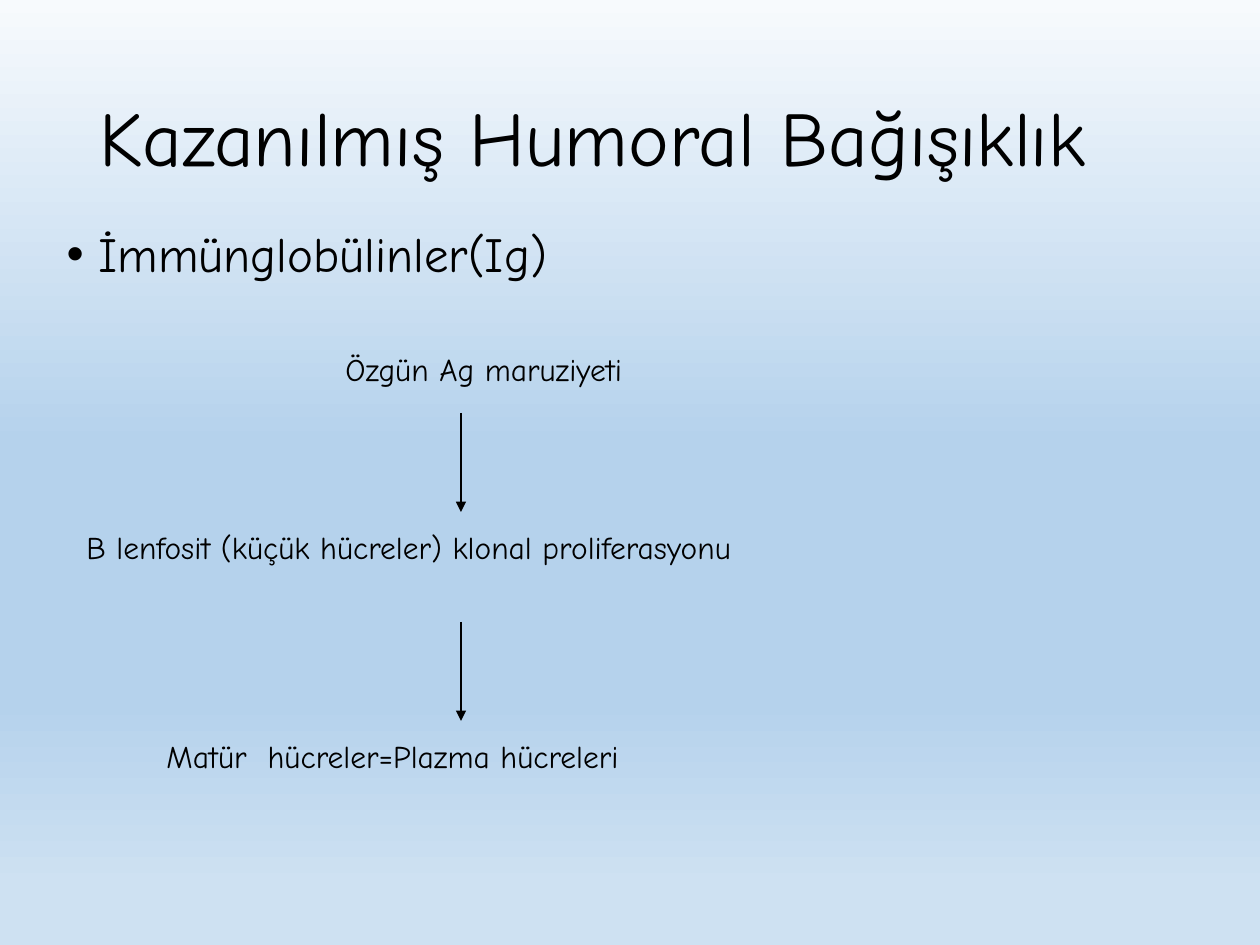
from dataclasses import dataclass

from lxml.etree import SubElement
from pptx import Presentation
from pptx.dml.color import RGBColor
from pptx.enum.shapes import MSO_CONNECTOR
from pptx.enum.text import MSO_ANCHOR, MSO_AUTO_SIZE, PP_ALIGN
from pptx.oxml import parse_xml
from pptx.oxml.ns import nsdecls, qn
from pptx.util import Emu, Pt


@dataclass(frozen=True)
class Theme:
    """Colours, typeface and type sizes of the slide."""

    font: str = "Comic Neue"
    ink: str = "000000"
    title: int = 44
    body: int = 28
    step: int = 18
    line: float = 0.75
    sky: tuple = ((0, "F7FAFD"), (47, "B5D2EC"), (74, "B5D2EC"), (94, "CEE1F2"))


THEME = Theme()
EMU_PER_PX = 914400 / 126
ARROW_X = 461
ARROW_LENGTH = 99
STEPS = (
    ("Özgün Ag maruziyeti", 333, 344, 338),
    ("B lenfosit (küçük hücreler) klonal proliferasyonu", 74, 522, 883),
    ("Matür  hücreler=Plazma hücreleri", 154, 731, 725),
)
STEP_HEIGHT = 50
ARROW_TO_STEP = 10


def px(length):
    """Turn pixels into EMU."""
    return Emu(round(length * EMU_PER_PX))


def paint_background(page):
    """Fill the page with the vertical sky gradient."""
    fill = page.background.fill
    fill.gradient()
    stops = "".join(
        f'<a:gs pos="{position * 1000}"><a:srgbClr val="{color}"/></a:gs>'
        for position, color in THEME.sky
    )
    gradient = parse_xml(
        f'<a:gradFill {nsdecls("a")} rotWithShape="1"><a:gsLst>{stops}</a:gsLst>'
        '<a:lin ang="5400000" scaled="0"/></a:gradFill>'
    )
    old = page.background._cSld.find(".//" + qn("a:gradFill"))
    old.getparent().replace(old, gradient)


def write(box, text, size, spacing=None, before=0, anchor=MSO_ANCHOR.TOP,
          fit=MSO_AUTO_SIZE.NONE):
    """Write one left-aligned paragraph into a box and return it."""
    frame = box.text_frame
    frame.word_wrap = True
    frame.auto_size = fit
    frame.vertical_anchor = anchor
    para = frame.paragraphs[0]
    para.alignment = PP_ALIGN.LEFT
    para.space_before = Pt(before)
    if spacing:
        para.line_spacing = spacing
    span = para.add_run()
    span.text = text
    span.font.name = THEME.font
    span.font.size = Pt(size)
    span.font.color.rgb = RGBColor.from_string(THEME.ink)
    return para


def place(box, left, top, width, height):
    """Move and size a placeholder."""
    box.left, box.top = px(left), px(top)
    box.width, box.height = px(width), px(height)


def add_bullet(para, indent):
    """Give a paragraph a round bullet with a hanging indent."""
    properties = para._p.get_or_add_pPr()
    properties.set("marL", str(px(indent)))
    properties.set("indent", str(-px(indent)))
    SubElement(properties, qn("a:buFont")).set("typeface", "Arial")
    SubElement(properties, qn("a:buChar")).set("char", "•")


def add_step(page, text, left, top, width):
    """Add one step of the process as a text box."""
    box = page.shapes.add_textbox(px(left), px(top), px(width), px(STEP_HEIGHT))
    write(box, text, THEME.step, before=THEME.step / 2,
          fit=MSO_AUTO_SIZE.SHAPE_TO_FIT_TEXT)


def add_arrow(page, bottom):
    """Add a downward arrow that ends at the given height."""
    arrow = page.shapes.add_connector(
        MSO_CONNECTOR.STRAIGHT, px(ARROW_X), px(bottom - ARROW_LENGTH),
        px(ARROW_X), px(bottom))
    arrow.line.width = Pt(THEME.line)
    arrow.line.color.rgb = RGBColor.from_string(THEME.ink)
    SubElement(arrow.line._get_or_add_ln(), qn("a:tailEnd")).set("type", "triangle")
    SubElement(arrow._element.spPr, qn("a:effectLst"))


def main():
    """Build and save the slide."""
    deck = Presentation()
    deck.slide_width, deck.slide_height = px(1260), px(945)
    page = deck.slides.add_slide(deck.slide_layouts[1])
    paint_background(page)

    title, body = page.shapes.title, page.placeholders[1]
    place(title, 87, 50, 1086, 183)
    write(title, "Kazanılmış Humoral Bağışıklık", THEME.title, spacing=0.9,
          anchor=MSO_ANCHOR.MIDDLE)
    place(body, 54, 224, 1134, 91)
    add_bullet(write(body, "İmmünglobülinler(Ig)", THEME.body, spacing=0.9,
                     before=10), 32)

    for step in STEPS:
        add_step(page, *step)
    for _, _, top, _ in STEPS[1:]:
        add_arrow(page, top - ARROW_TO_STEP)

    deck.save("out.pptx")


if __name__ == "__main__":
    main()
